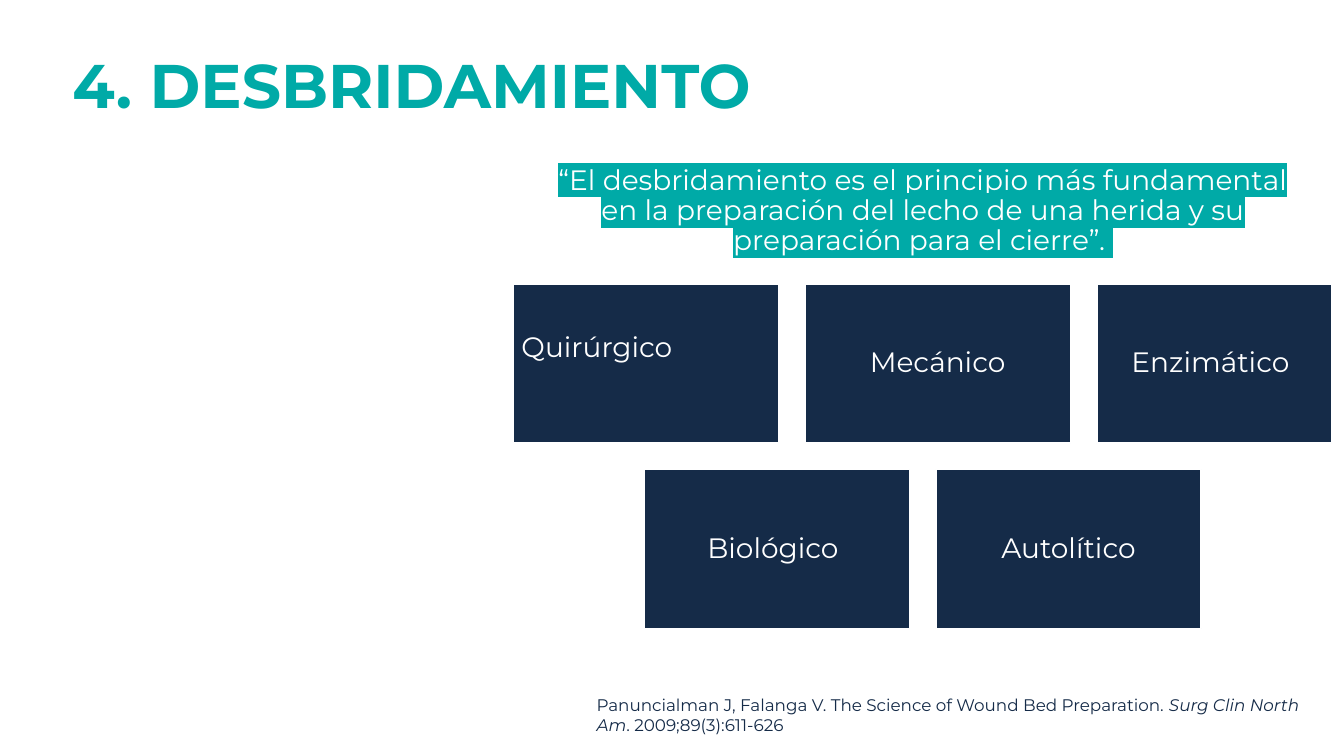
"""Build the wound debridement slide with its quote, five method tiles and reference."""
from lxml.etree import SubElement
from pptx import Presentation
from pptx.dml.color import RGBColor
from pptx.enum.shapes import MSO_SHAPE
from pptx.enum.text import MSO_ANCHOR, MSO_AUTO_SIZE, PP_ALIGN
from pptx.oxml.ns import qn
from pptx.util import Pt

TITLE = "4. DESBRIDAMIENTO"
QUOTE = ("“El desbridamiento es el principio más fundamental en la preparación "
         "del lecho de una herida y su preparación para el cierre”. ")
METHOD_ROWS = [
    (366.5, ["Quirúrgico", "Mecánico", "Enzimático "]),
    (460, ["Biológico ", "Autolítico"]),
]
REFERENCE = [
    ("Panuncialman J, Falanga V. The Science of Wound Bed Preparation. ", False),
    ("Surg Clin North Am", True),
    (". 2009;89(3):611-626", False),
]
TEAL, NAVY, WHITE = "00AAA7", "152B48", "FFFFFF"
FONT = "Montserrat"
TILE_WIDTH, TILE_HEIGHT, TILE_GAP = 189.5, 113.5, 19
TILES_TOP, TILES_RIGHT, TILE_INSET = 203, 951, 6


def color(value):
    return RGBColor.from_string(value)


def place(shape, left, top, width, height):
    shape.left, shape.top = Pt(left), Pt(top)
    shape.width, shape.height = Pt(width), Pt(height)


def add_run(paragraph, text, size, text_color, bold=False, italic=False):
    run = paragraph.add_run()
    run.text = text
    font = run.font
    font.name, font.size, font.bold, font.italic = FONT, Pt(size), bold, italic
    font.color.rgb = color(text_color)
    return run


def format_paragraph(paragraph, alignment, line_spacing=0.9):
    paragraph.alignment = alignment
    paragraph.line_spacing = line_spacing
    paragraph.space_before = Pt(0)


def highlight(run, value):
    properties = run.font._element
    mark = SubElement(properties, qn("a:highlight"))
    SubElement(mark, qn("a:srgbClr"), val=value)
    properties.find(qn("a:solidFill")).addnext(mark)


def add_title(slide):
    title = slide.shapes.title
    place(title, 44.5, 11, 828, 104)
    frame = title.text_frame
    frame.auto_size = MSO_AUTO_SIZE.NONE
    frame.vertical_anchor = MSO_ANCHOR.MIDDLE
    format_paragraph(frame.paragraphs[0], PP_ALIGN.LEFT)
    add_run(frame.paragraphs[0], TITLE, 44, TEAL, bold=True)


def add_quote(slide):
    body = slide.placeholders[1]
    place(body, 382.5, 115, 553.5, 356.5)
    frame = body.text_frame
    frame.auto_size = MSO_AUTO_SIZE.NONE
    paragraph = frame.paragraphs[0]
    format_paragraph(paragraph, PP_ALIGN.CENTER)
    properties = paragraph._p.get_or_add_pPr()
    properties.set("marL", "0")
    properties.set("indent", "0")
    SubElement(properties, qn("a:buNone"))
    highlight(add_run(paragraph, QUOTE, 20, WHITE), TEAL)


def add_tile(slide, method, left, top):
    tile = slide.shapes.add_shape(MSO_SHAPE.RECTANGLE, 0, 0, 0, 0)
    place(tile, left, top, min(TILE_WIDTH, TILES_RIGHT - left), TILE_HEIGHT)
    tile.shadow.inherit = False
    tile.fill.solid()
    tile.fill.fore_color.rgb = color(NAVY)
    tile.line.color.rgb = color(WHITE)
    tile.line.width = Pt(1)
    frame = tile.text_frame
    frame.word_wrap = True
    frame.vertical_anchor = MSO_ANCHOR.MIDDLE
    frame.margin_left = frame.margin_right = Pt(TILE_INSET)
    frame.margin_top = frame.margin_bottom = Pt(TILE_INSET)
    format_paragraph(frame.paragraphs[0], PP_ALIGN.CENTER)
    add_run(frame.paragraphs[0], method, 20, WHITE)
    return tile


def add_methods(slide):
    tiles = []
    for row, (row_left, methods) in enumerate(METHOD_ROWS):
        top = TILES_TOP + row * (TILE_HEIGHT + TILE_GAP)
        for column, method in enumerate(methods):
            left = row_left + column * (TILE_WIDTH + TILE_GAP)
            tiles.append(add_tile(slide, method, left, top))
    surgical_frame = tiles[0].text_frame
    surgical_frame.paragraphs[0].alignment = PP_ALIGN.LEFT
    surgical_frame.margin_bottom = Pt(TILE_INSET + 21.5)


def add_reference(slide):
    box = slide.shapes.add_textbox(Pt(419), Pt(492.5), Pt(541), Pt(36))
    frame = box.text_frame
    frame.word_wrap = True
    format_paragraph(frame.paragraphs[0], PP_ALIGN.LEFT, 1.0)
    for text, italic in REFERENCE:
        add_run(frame.paragraphs[0], text, 12, NAVY, italic=italic)


def main():
    presentation = Presentation()
    presentation.slide_width, presentation.slide_height = Pt(960), Pt(540)
    slide = presentation.slides.add_slide(presentation.slide_layouts[1])
    slide.background.fill.solid()
    slide.background.fill.fore_color.rgb = color(WHITE)
    add_title(slide)
    add_quote(slide)
    add_methods(slide)
    add_reference(slide)
    presentation.save("out.pptx")


if __name__ == "__main__":
    main()
